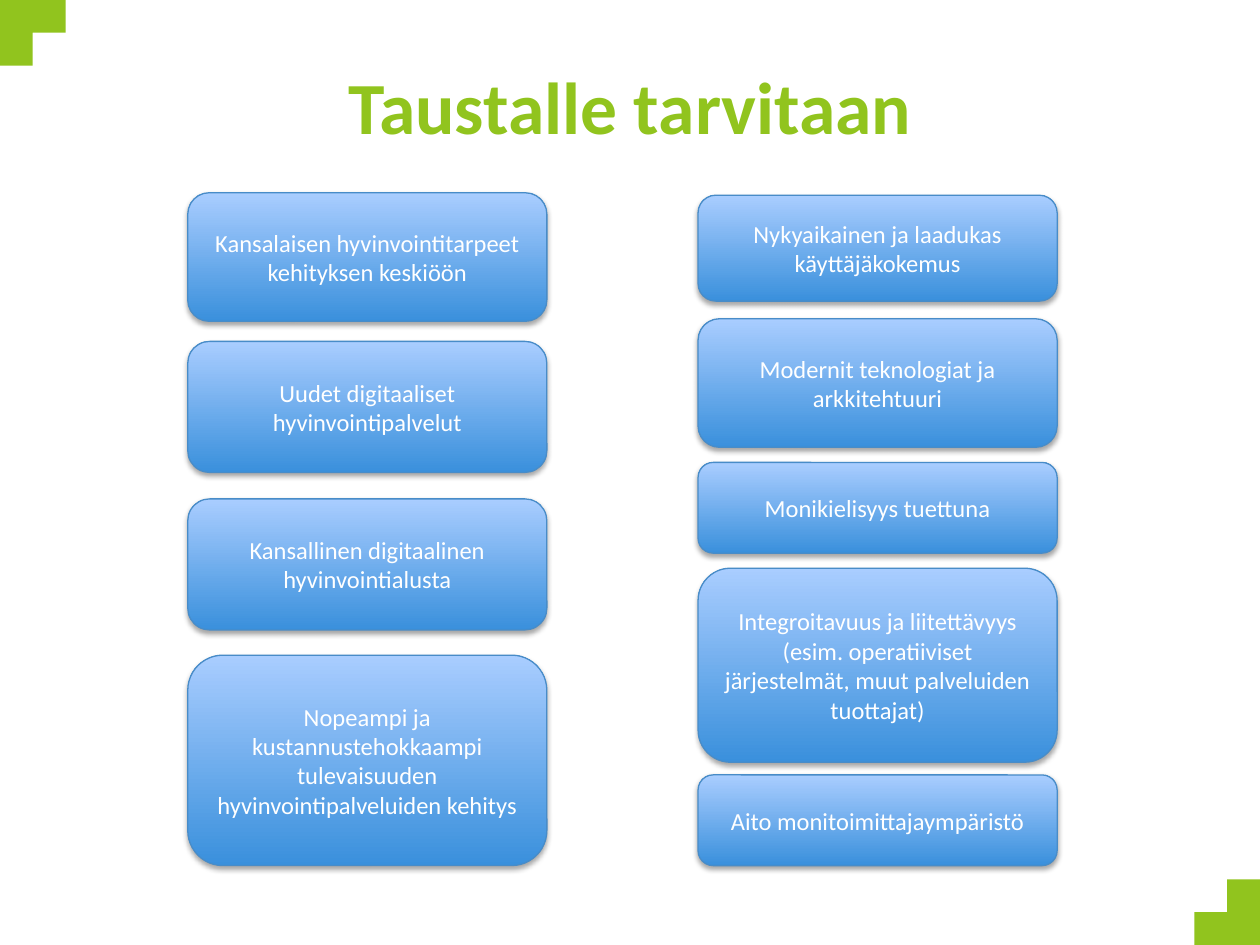
"""Build the "Taustalle tarvitaan" slide with two columns of rounded boxes."""
from dataclasses import dataclass

from lxml import etree
from pptx import Presentation
from pptx.dml.color import RGBColor
from pptx.enum.shapes import MSO_SHAPE
from pptx.enum.text import MSO_ANCHOR, PP_ALIGN
from pptx.oxml.ns import qn
from pptx.util import Inches, Pt

ROUNDED = MSO_SHAPE.ROUNDED_RECTANGLE
MIDDLE = MSO_ANCHOR.MIDDLE
CENTER = PP_ALIGN.CENTER
TITLE_ONLY = 5


@dataclass(frozen=True)
class Theme:
    font: str = "Calibri"
    green: RGBColor = RGBColor(0x91, 0xC4, 0x1E)
    white: RGBColor = RGBColor(0xFF, 0xFF, 0xFF)
    box_bottom: RGBColor = RGBColor(0x3A, 0x90, 0xDC)
    box_top: RGBColor = RGBColor(0xA9, 0xCD, 0xFF)
    box_line: RGBColor = RGBColor(0x48, 0x8C, 0xC8)
    shadow: str = "000000"
    title_size: Pt = Pt(42)
    box_size: Pt = Pt(14)


@dataclass(frozen=True)
class Box:
    top: float
    height: float
    lines: tuple[str, ...]


@dataclass(frozen=True)
class Column:
    left: float
    boxes: tuple[Box, ...]


THEME = Theme()
BOX_WIDTH = 2.85
CORNER_SIZE = 0.52
CORNER_OUTLINE = ((1, 0), (1, 0.5), (0.5, 0.5), (0.5, 1), (0, 1))
COLUMNS = (
    Column(1.49, (
        Box(1.53, 1.02, ("Kansalaisen hyvinvointitarpeet kehityksen keskiöön",)),
        Box(2.71, 1.04, ("Uudet digitaaliset hyvinvointipalvelut",)),
        Box(3.96, 1.04, ("Kansallinen digitaalinen hyvinvointialusta",)),
        Box(5.2, 1.67, ("Nopeampi ja kustannustehokkaampi tulevaisuuden "
                        "hyvinvointipalveluiden kehitys",)),
    )),
    Column(5.54, (
        Box(1.55, 0.84, ("Nykyaikainen ja laadukas käyttäjäkokemus",)),
        Box(2.53, 1.02, ("Modernit teknologiat ja arkkitehtuuri",)),
        Box(3.67, 0.72, ("Monikielisyys tuettuna",)),
        Box(4.51, 1.54, ("Integroitavuus ja liitettävyys",
                         "(esim. operatiiviset järjestelmät, muut palveluiden tuottajat)")),
        Box(6.15, 0.72, ("Aito monitoimittajaympäristö",)),
    )),
)


def add_run(p, text: str, size: Pt, color: RGBColor, bold: bool = False) -> None:
    """Add one centred run to a paragraph."""
    p.alignment = CENTER
    r = p.add_run()
    r.text = text
    r.font.name = THEME.font
    r.font.size = size
    r.font.bold = bold
    r.font.color.rgb = color


def add_shadow(sp) -> None:
    """Give a shape a soft shadow straight below it."""
    sp.shadow.inherit = False
    effects = sp._element.spPr.find(qn("a:effectLst"))
    outer = etree.SubElement(effects, qn("a:outerShdw"), blurRad=str(Pt(3.1)),
                             dist=str(Pt(1.8)), dir="5400000", rotWithShape="0")
    color = etree.SubElement(outer, qn("a:srgbClr"), val=THEME.shadow)
    etree.SubElement(color, qn("a:alpha"), val="35000")


def add_corner(s, x: float, y: float, size: float) -> None:
    """Draw a green L from its outer corner; a negative size points up and left."""
    builder = s.shapes.build_freeform(Inches(x), Inches(y))
    builder.add_line_segments([(Inches(x + dx * size), Inches(y + dy * size))
                               for dx, dy in CORNER_OUTLINE])
    sp = builder.convert_to_shape()
    sp.shadow.inherit = False
    sp.fill.solid()
    sp.fill.fore_color.rgb = THEME.green
    sp.line.fill.background()


def add_title(s, text: str) -> None:
    """Place and format the title."""
    sp = s.shapes.title
    sp.left, sp.top = Inches(0.5), Inches(0.42)
    sp.width, sp.height = Inches(9), Inches(0.91)
    tf = sp.text_frame
    tf.vertical_anchor = MIDDLE
    p = tf.paragraphs[0]
    p.line_spacing = 0.9
    add_run(p, text, THEME.title_size, THEME.green, bold=True)


def add_box(s, left: float, box: Box) -> None:
    """Draw a gradient box with its text."""
    sp = s.shapes.add_shape(ROUNDED, Inches(left), Inches(box.top),
                            Inches(BOX_WIDTH), Inches(box.height))
    sp.fill.gradient()
    sp.fill.gradient_angle = 90
    for stop, color in zip(sp.fill.gradient_stops, (THEME.box_bottom, THEME.box_top)):
        stop.color.rgb = color
    sp.line.color.rgb = THEME.box_line
    sp.line.width = Pt(0.75)
    add_shadow(sp)
    tf = sp.text_frame
    tf.word_wrap = True
    tf.vertical_anchor = MIDDLE
    for i, line in enumerate(box.lines):
        p = tf.add_paragraph() if i else tf.paragraphs[0]
        add_run(p, line, THEME.box_size, THEME.white)


def main() -> None:
    """Build and save the slide."""
    prs = Presentation()
    prs.slide_width, prs.slide_height = Inches(10), Inches(7.5)
    s = prs.slides.add_slide(prs.slide_layouts[TITLE_ONLY])
    add_corner(s, 0, 0, CORNER_SIZE)
    add_corner(s, 10, 7.5, -CORNER_SIZE)
    add_title(s, "Taustalle tarvitaan")
    for column in COLUMNS:
        for box in column.boxes:
            add_box(s, column.left, box)
    prs.save("out.pptx")


if __name__ == "__main__":
    main()
